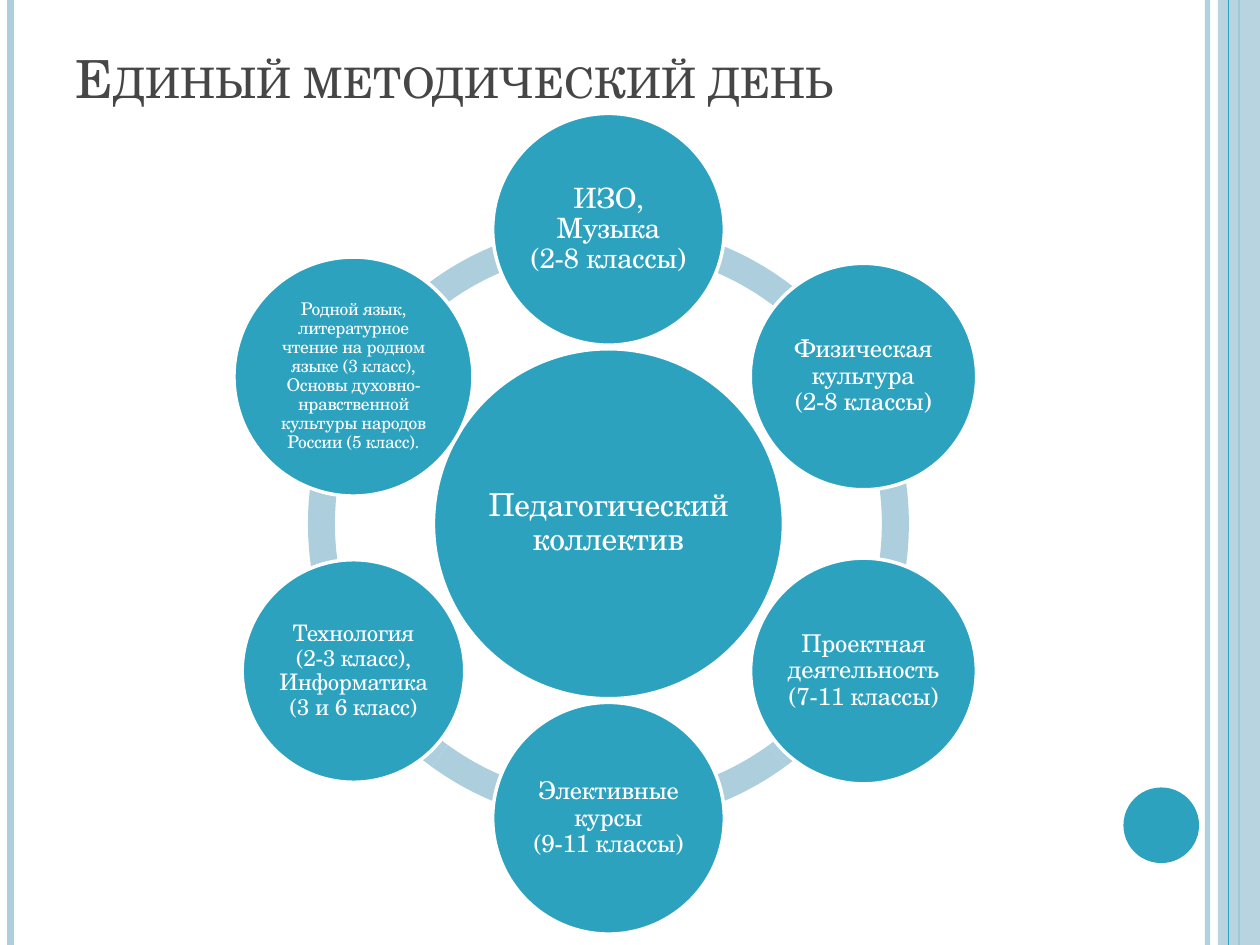
from math import cos, radians, sin

from lxml import etree
from pptx import Presentation
from pptx.dml.color import RGBColor
from pptx.enum.shapes import MSO_CONNECTOR, MSO_SHAPE
from pptx.enum.text import MSO_ANCHOR, PP_ALIGN
from pptx.oxml.ns import qn
from pptx.util import Pt

STRAIGHT = MSO_CONNECTOR.STRAIGHT
ELLIPSE, RECTANGLE, BLOCK_ARC = MSO_SHAPE.OVAL, MSO_SHAPE.RECTANGLE, MSO_SHAPE.BLOCK_ARC
MIDDLE, BOTTOM = MSO_ANCHOR.MIDDLE, MSO_ANCHOR.BOTTOM
CENTER = PP_ALIGN.CENTER

FONT = "TeX Gyre Schola"
TEAL, PALE, WHITE, GREY = "2DA2BF", "ADCEDC", "FFFFFF", "464646"
WIDTH, HEIGHT = 720, 540

# Text, font size and circle diameter, clockwise from the top
SUBJECTS = [
    ("ИЗО, Музыка\n(2-8 классы)", 16, 132.4),
    ("Физическая культура\n(2-8 классы)", 14, 129.4),
    ("Проектная деятельность\n(7-11 классы)", 14, 129),
    ("Элективные курсы\n(9-11 классы)", 14, 132.4),
    ("Технология\n(2-3 класс), Информатика (3 и 6 класс)", 13, 127.2),
    ("Родной язык, литературное чтение на родном языке (3 класс), "
     "Основы духовно-нравственной культуры народов России (5 класс).", 10, 136.6),
]
ARCS = [(126, 162), (90, 126), (54, 90), (18, 54), (198, 18), (162, 198)]


def color(hex_string):
    return RGBColor.from_string(hex_string)


def set_opacity(element, percent):
    """Make the solid colour inside an element partly transparent."""
    tint = next(element.iter(qn("a:srgbClr")))
    etree.SubElement(tint, qn("a:alpha")).set("val", str(percent * 1000))


def add_shape(slide, kind, box, fill, outline=None):
    shape = slide.shapes.add_shape(kind, *(Pt(value) for value in box))
    shape.shadow.inherit = False
    shape.fill.solid()
    shape.fill.fore_color.rgb = color(fill)
    if outline:
        shape.line.color.rgb = color(outline)
        shape.line.width = Pt(2)
    else:
        shape.line.fill.background()
    return shape


def add_rule(slide, x, line_color, width):
    """Draw a vertical line over the full slide height."""
    rule = slide.shapes.add_connector(STRAIGHT, Pt(x), Pt(0), Pt(x), Pt(HEIGHT))
    rule.line.color.rgb = color(line_color)
    rule.line.width = Pt(width)
    etree.SubElement(rule._element.spPr, qn("a:effectLst"))
    return rule


def format_run(run, size, font_color, **attributes):
    run.font.name = FONT
    run.font.size = Pt(size)
    run.font.color.rgb = color(font_color)
    for name, value in attributes.items():
        run.font._element.set(name, value)


def add_circle(slide, center_x, center_y, diameter, text, size, margin):
    box = (center_x - diameter / 2, center_y - diameter / 2, diameter, diameter)
    circle = add_shape(slide, ELLIPSE, box, TEAL, WHITE)
    frame = circle.text_frame
    frame.word_wrap = True
    frame.vertical_anchor = MIDDLE
    frame.margin_left = frame.margin_right = Pt(margin)
    frame.margin_top = frame.margin_bottom = Pt(margin)
    frame.text = text
    for paragraph in frame.paragraphs:
        paragraph.alignment = CENTER
        paragraph.line_spacing = 0.9
        for run in paragraph.runs:
            format_run(run, size, WHITE, spc="-20")


def add_decoration(slide):
    set_opacity(add_rule(slide, 690, PALE, 3)._element, 93)
    add_rule(slide, 6, PALE, 4.5)
    add_rule(slide, 708, TEAL, 1.5)
    band = add_shape(slide, RECTANGLE, (696, 0, WIDTH - 696, HEIGHT), PALE)
    set_opacity(band._element, 87)
    add_rule(slide, 702, TEAL, 0.75)
    add_shape(slide, ELLIPSE, (642, 450, 43.2, 43.2), TEAL)


def add_title(slide, box, text):
    frame = slide.shapes.add_textbox(*(Pt(value) for value in box)).text_frame
    frame.word_wrap = True
    frame.vertical_anchor = BOTTOM
    frame.text = text
    format_run(frame.paragraphs[0].runs[0], 30, GREY, cap="small")


def add_radial_diagram(slide, box):
    """Draw the hub and its subject circles; the box bounds the ring."""
    left, top, width, height = box
    center_x, center_y = left + width / 2, top + height / 2
    for start, end in ARCS:
        arc = add_shape(slide, BLOCK_ARC, box, PALE)
        # Angles are stored in 1/60000 degree, adjustments in 1/100000
        arc.adjustments[0] = start * 0.6
        arc.adjustments[1] = end * 0.6
        arc.adjustments[2] = 0.045
    add_circle(slide, center_x, center_y, 200, "Педагогический коллектив", 18, 2)
    orbit = width * 0.49
    for index, (text, size, diameter) in enumerate(SUBJECTS):
        angle = radians(360 / len(SUBJECTS) * index - 90)
        add_circle(slide, center_x + orbit * cos(angle), center_y + orbit * sin(angle),
                   diameter, text, size, 1.4)


def main():
    presentation = Presentation()
    presentation.slide_width, presentation.slide_height = Pt(WIDTH), Pt(HEIGHT)
    slide = presentation.slides.add_slide(presentation.slide_layouts[6])
    add_decoration(slide)
    add_title(slide, (36, 21.6, 588, 44), "Единый методический день")
    add_radial_diagram(slide, (176, 127.6, 343.4, 343.4))
    presentation.save("out.pptx")


if __name__ == "__main__":
    main()
